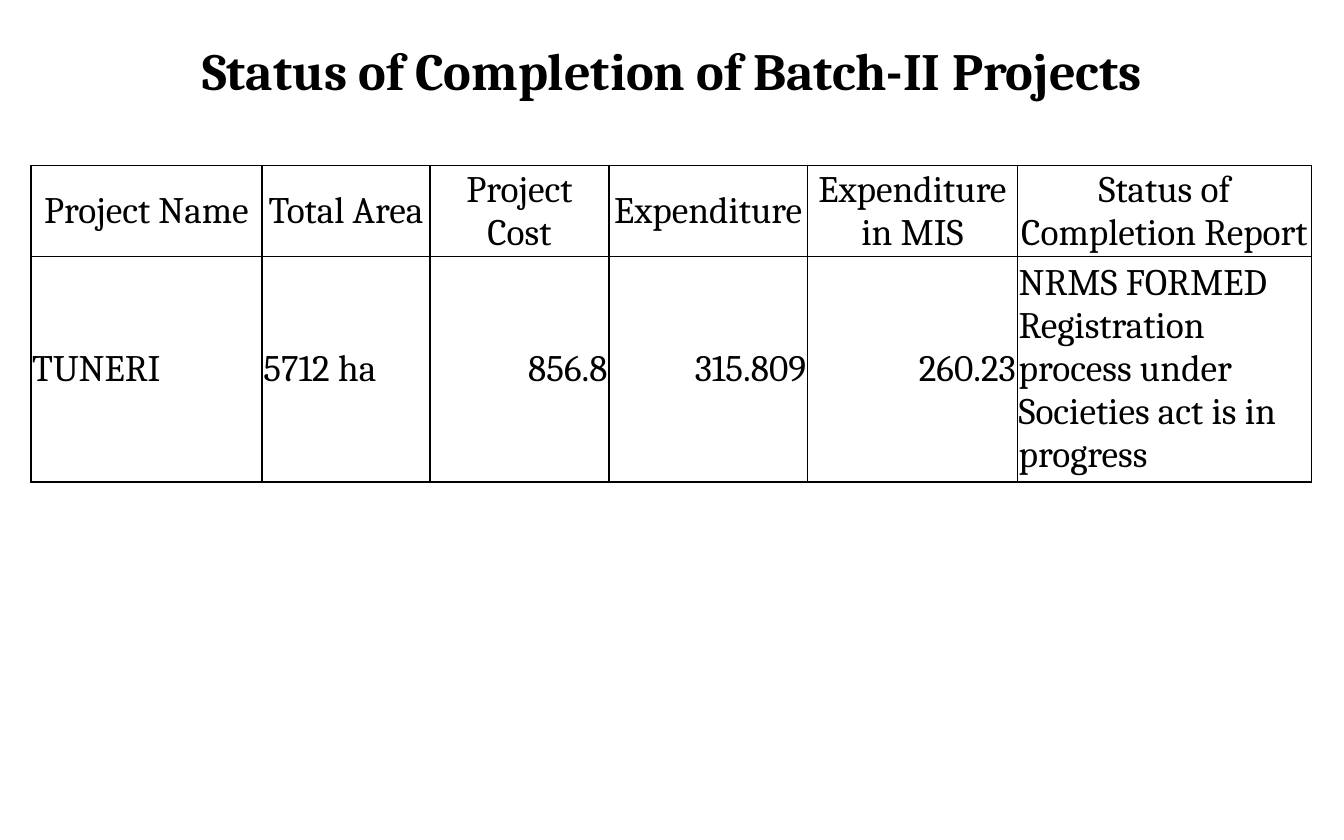
"""Build the slide on the completion status of the Batch-II projects."""
import lxml.etree
import pptx
import pptx.dml.color
import pptx.enum.text
import pptx.oxml.ns
import pptx.util

COLOURS = {"ink": "000000", "paper": "FFFFFF"}
ALIGN = pptx.enum.text.PP_ALIGN
MIDDLE = pptx.enum.text.MSO_ANCHOR.MIDDLE


def write_text(frame, text, size=20, bold=False, align=ALIGN.LEFT):
    frame.word_wrap = True
    para = frame.paragraphs[0]
    para.alignment = align
    span = para.add_run()
    span.text = text
    span.font.name = "Cambria"
    span.font.size = pptx.util.Pt(size)
    span.font.bold = bold
    span.font.color.rgb = pptx.dml.color.RGBColor.from_string(COLOURS["ink"])


def add_borders(cell, width=1):
    properties = cell._tc.get_or_add_tcPr()
    for position, side in enumerate(("lnL", "lnR", "lnT", "lnB")):
        line = lxml.etree.Element(pptx.oxml.ns.qn(f"a:{side}"), w=str(pptx.util.Pt(width)))
        fill = lxml.etree.SubElement(line, pptx.oxml.ns.qn("a:solidFill"))
        lxml.etree.SubElement(fill, pptx.oxml.ns.qn("a:srgbClr"), val=COLOURS["ink"])
        properties.insert(position, line)


deck = pptx.Presentation()
deck.slide_width = pptx.util.Inches(10)
deck.slide_height = pptx.util.Inches(6.25)
page = deck.slides.add_slide(deck.slide_layouts[6])

title_box = page.shapes.add_textbox(0, 0, deck.slide_width, pptx.util.Inches(1.04))
title_box.text_frame.vertical_anchor = MIDDLE
write_text(title_box.text_frame, "Status of Completion of Batch-II Projects",
           size=28, bold=True, align=ALIGN.CENTER)

columns = [
    ("Project Name", "TUNERI", 1.72, ALIGN.LEFT),
    ("Total Area", "5712 ha", 1.25, ALIGN.LEFT),
    ("Project Cost", "856.8", 1.33, ALIGN.RIGHT),
    ("Expenditure", "315.809", 1.48, ALIGN.RIGHT),
    ("Expenditure in MIS", "260.23", 1.56, ALIGN.RIGHT),
    ("Status of Completion Report",
     "NRMS FORMED Registration process under Societies act is in progress",
     2.19, ALIGN.LEFT),
]
row_heights = [0.64, 1.61]

table_frame = page.shapes.add_table(
    len(row_heights), len(columns), pptx.util.Inches(0.23), pptx.util.Inches(1.23),
    pptx.util.Inches(sum(column[2] for column in columns)),
    pptx.util.Inches(sum(row_heights)))
table = table_frame.table
table.first_row = False
table.horz_banding = False

for row, height in zip(table.rows, row_heights):
    row.height = pptx.util.Inches(height)

for column_index, (heading, value, width, value_align) in enumerate(columns):
    table.columns[column_index].width = pptx.util.Inches(width)
    entries = [(heading, ALIGN.CENTER), (value, value_align)]
    for row_index, (text, align) in enumerate(entries):
        cell = table.cell(row_index, column_index)
        cell.margin_left = cell.margin_right = cell.margin_top = pptx.util.Inches(0.01)
        cell.margin_bottom = 0
        cell.vertical_anchor = MIDDLE
        cell.fill.solid()
        cell.fill.fore_color.rgb = pptx.dml.color.RGBColor.from_string(COLOURS["paper"])
        add_borders(cell)
        write_text(cell.text_frame, text, align=align)

deck.save("out.pptx")
